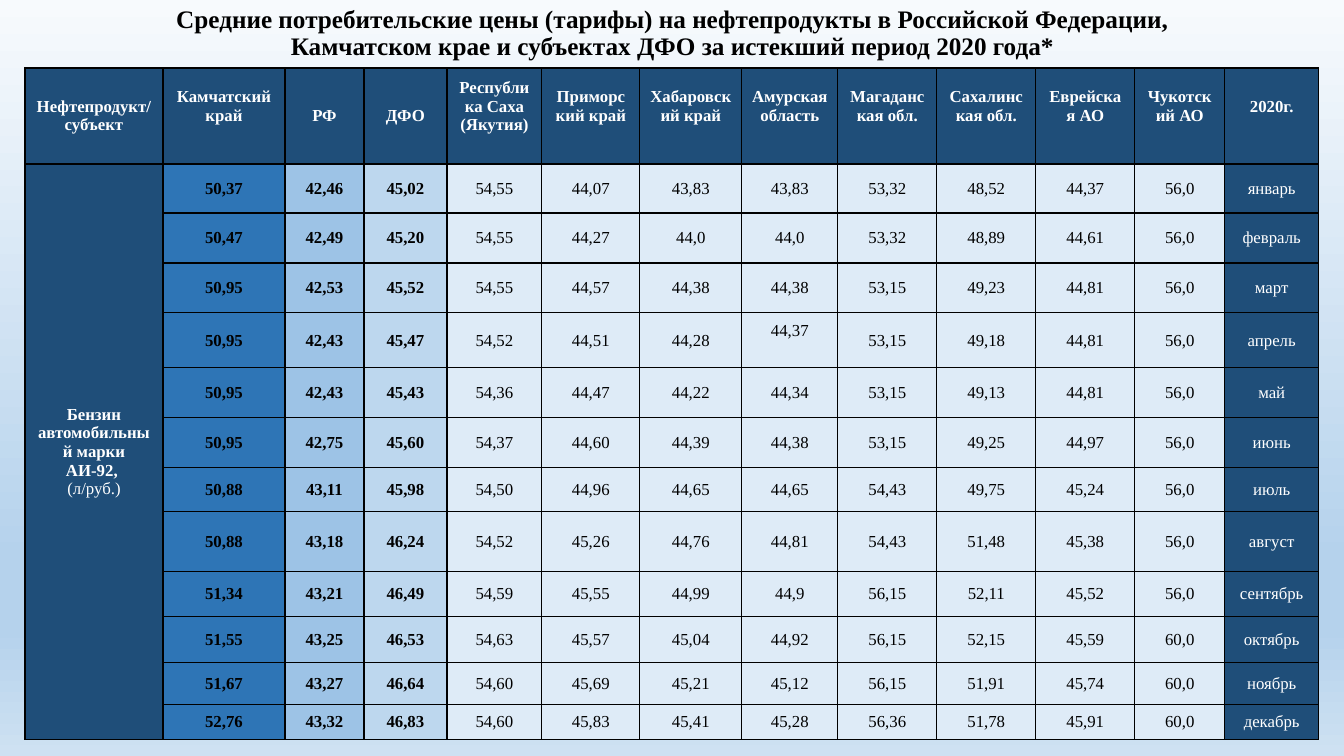
import lxml.etree
import pptx
import pptx.dml.color
import pptx.enum.text
import pptx.oxml
import pptx.oxml.ns
import pptx.util

PX_PER_INCH = 100.8
FONT = "Times New Roman"
BLACK = pptx.dml.color.RGBColor(0x00, 0x00, 0x00)
WHITE = pptx.dml.color.RGBColor(0xFF, 0xFF, 0xFF)
NAVY = pptx.dml.color.RGBColor(0x1F, 0x4E, 0x79)
BLUE = pptx.dml.color.RGBColor(0x2E, 0x75, 0xB6)
SKY = pptx.dml.color.RGBColor(0x9D, 0xC3, 0xE6)
PALE = pptx.dml.color.RGBColor(0xBD, 0xD7, 0xEE)
ICE = pptx.dml.color.RGBColor(0xDE, 0xEB, 0xF7)
BACKDROP_STOPS = [
    (0, pptx.dml.color.RGBColor(0xF7, 0xFA, 0xFD)),
    (74, pptx.dml.color.RGBColor(0xB5, 0xD2, 0xEC)),
    (83, pptx.dml.color.RGBColor(0xB5, 0xD2, 0xEC)),
    (100, pptx.dml.color.RGBColor(0xCE, 0xE1, 0xF2)),
]

TITLE = (
    "Средние потребительские цены (тарифы) на нефтепродукты в Российской "
    "Федерации, Камчатском крае и субъектах ДФО за истекший период 2020 года*"
)
REGIONS = [
    "Нефтепродукт/субъект", "Камчатский край", "РФ", "ДФО",
    "Республика Саха (Якутия)", "Приморский край", "Хабаровский край",
    "Амурская область", "Магаданская обл.", "Сахалинская обл.",
    "Еврейская АО", "Чукотский АО", "2020г.",
]
CENTRED_REGIONS = ("Нефтепродукт/субъект", "РФ", "ДФО")
MONTHLY_PRICES = [
    "50,37 42,46 45,02 54,55 44,07 43,83 43,83 53,32 48,52 44,37 56,0 январь",
    "50,47 42,49 45,20 54,55 44,27 44,0 44,0 53,32 48,89 44,61 56,0 февраль",
    "50,95 42,53 45,52 54,55 44,57 44,38 44,38 53,15 49,23 44,81 56,0 март",
    "50,95 42,43 45,47 54,52 44,51 44,28 44,37 53,15 49,18 44,81 56,0 апрель",
    "50,95 42,43 45,43 54,36 44,47 44,22 44,34 53,15 49,13 44,81 56,0 май",
    "50,95 42,75 45,60 54,37 44,60 44,39 44,38 53,15 49,25 44,97 56,0 июнь",
    "50,88 43,11 45,98 54,50 44,96 44,65 44,65 54,43 49,75 45,24 56,0 июль",
    "50,88 43,18 46,24 54,52 45,26 44,76 44,81 54,43 51,48 45,38 56,0 август",
    "51,34 43,21 46,49 54,59 45,55 44,99 44,9 56,15 52,11 45,52 56,0 сентябрь",
    "51,55 43,25 46,53 54,63 45,57 45,04 44,92 56,15 52,15 45,59 60,0 октябрь",
    "51,67 43,27 46,64 54,60 45,69 45,21 45,12 56,15 51,91 45,74 60,0 ноябрь",
    "52,76 43,32 46,83 54,60 45,83 45,41 45,28 56,36 51,78 45,91 60,0 декабрь",
]
COLUMN_FILLS = [NAVY, BLUE, SKY, PALE] + [ICE] * 8 + [NAVY]
COLUMN_WIDTHS = [138, 122, 79, 83, 95, 98, 102, 96, 99, 99, 99, 90, 94]
ROW_HEIGHTS = [96, 49, 50, 50, 55, 50, 50, 44, 60, 45, 46, 42, 35]
RAISED_BOTTOM = 24
APRIL_ROW, AMUR_COLUMN = 4, 7


def px(length):
    return pptx.util.Emu(round(length * 914400 / PX_PER_INCH))


def add_run(paragraph, text, size, colour, bold):
    paragraph.alignment = pptx.enum.text.PP_ALIGN.CENTER
    run = paragraph.add_run()
    run.text = text
    run.font.name = FONT
    run.font.size = pptx.util.Pt(size)
    run.font.bold = bold
    run.font.color.rgb = colour


def paint_backdrop(slide):
    fill = slide.background.fill
    fill.gradient()
    gradient = slide.background._cSld.find(".//" + pptx.oxml.ns.qn("a:gradFill"))
    stops = gradient.find(pptx.oxml.ns.qn("a:gsLst"))
    for stop in list(stops):
        stops.remove(stop)
    for percent, colour in BACKDROP_STOPS:
        stop = lxml.etree.SubElement(
            stops, pptx.oxml.ns.qn("a:gs"), pos=str(percent * 1000))
        lxml.etree.SubElement(
            stop, pptx.oxml.ns.qn("a:srgbClr"), val=str(colour))
    gradient.find(pptx.oxml.ns.qn("a:lin")).set("ang", "5400000")


def add_title(slide):
    frame = slide.shapes.add_textbox(px(93), px(0), px(1159), px(68)).text_frame
    frame.word_wrap = True
    frame.vertical_anchor = pptx.enum.text.MSO_ANCHOR.MIDDLE
    frame.margin_left = frame.margin_right = px(40)
    heading = frame.paragraphs[0]
    heading.line_spacing = 0.9
    add_run(heading, TITLE, 18, BLACK, True)


def style_cell(cell, fill):
    properties = cell._tc.get_or_add_tcPr()
    for side in ("lnL", "lnR", "lnT", "lnB"):
        properties.append(pptx.oxml.parse_xml(
            f'<a:{side} {pptx.oxml.ns.nsdecls("a")} w="12700"><a:solidFill>'
            f'<a:srgbClr val="{BLACK}"/></a:solidFill></a:{side}>'))
    cell.fill.solid()
    cell.fill.fore_color.rgb = fill
    cell.vertical_anchor = pptx.enum.text.MSO_ANCHOR.MIDDLE


def write_cell(cell, text, colour, bold):
    add_run(cell.text_frame.paragraphs[0], text, 12, colour, bold)


def add_price_table(slide):
    prices = slide.shapes.add_table(
        len(ROW_HEIGHTS), len(COLUMN_WIDTHS), px(25), px(68),
        px(sum(COLUMN_WIDTHS)), px(sum(ROW_HEIGHTS))).table
    prices.first_row = prices.horz_banding = False
    for column, width in zip(prices.columns, COLUMN_WIDTHS):
        column.width = px(width)
    for row, height in zip(prices.rows, ROW_HEIGHTS):
        row.height = px(height)

    for row_number in range(len(ROW_HEIGHTS)):
        for column_number, fill in enumerate(COLUMN_FILLS):
            style_cell(prices.cell(row_number, column_number),
                       fill if row_number else NAVY)

    for column_number, region in enumerate(REGIONS):
        header = prices.cell(0, column_number)
        write_cell(header, region, WHITE, True)
        if region not in CENTRED_REGIONS:
            header.margin_bottom = px(RAISED_BOTTOM)

    for row_number, month in enumerate(MONTHLY_PRICES, 1):
        for column_number, value in enumerate(month.split(), 1):
            colour = WHITE if COLUMN_FILLS[column_number] == NAVY else BLACK
            write_cell(prices.cell(row_number, column_number), value, colour,
                       column_number <= 3)
    prices.cell(APRIL_ROW, AMUR_COLUMN).margin_bottom = px(RAISED_BOTTOM)

    product = prices.cell(1, 0)
    product.merge(prices.cell(len(MONTHLY_PRICES), 0))
    write_cell(product, "Бензин автомобильный марки АИ-92, ", WHITE, True)
    add_run(product.text_frame.add_paragraph(), "(л/руб.)", 12, WHITE, False)


def main():
    presentation = pptx.Presentation()
    presentation.slide_width = px(1344)
    presentation.slide_height = px(756)
    slide = presentation.slides.add_slide(presentation.slide_layouts[6])
    paint_backdrop(slide)
    add_title(slide)
    add_price_table(slide)
    presentation.save("out.pptx")


if __name__ == "__main__":
    main()
